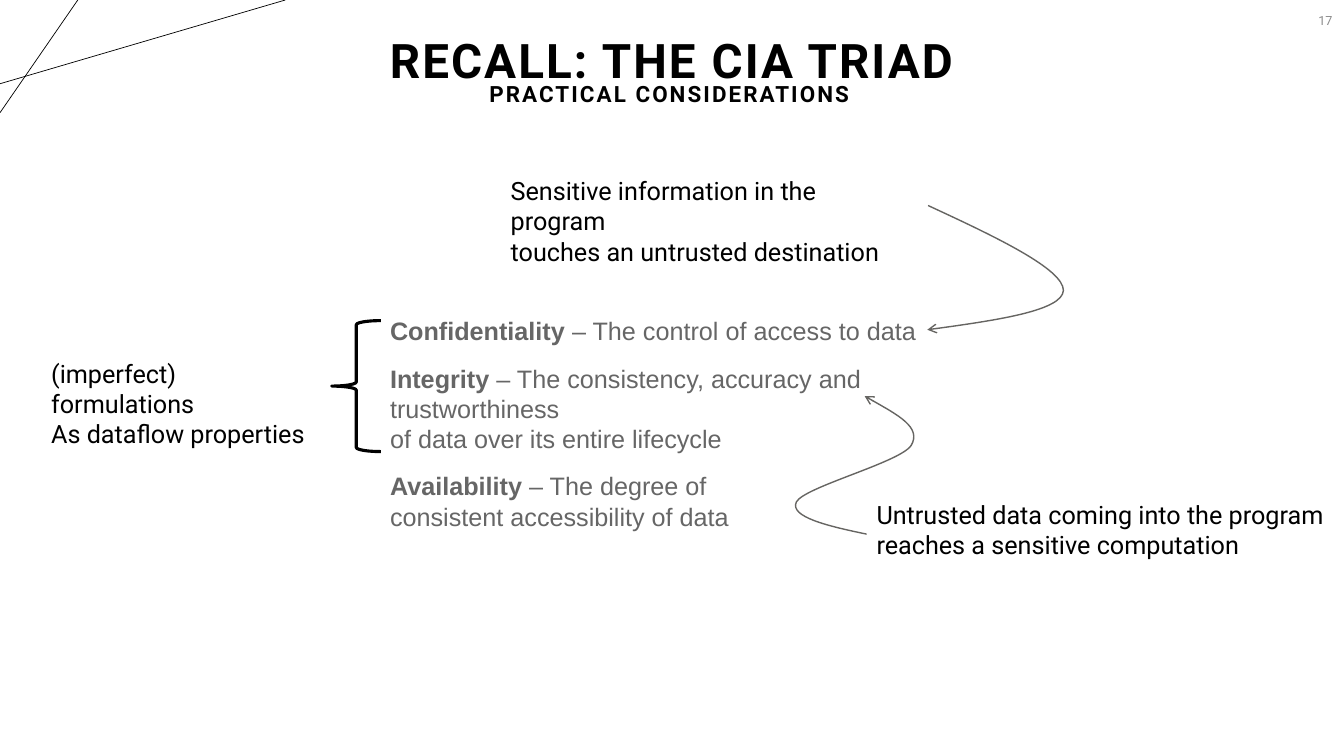
"""Builds the CIA triad slide with its dataflow annotations."""
from lxml.etree import SubElement
from pptx import Presentation
from pptx.dml.color import RGBColor
from pptx.enum.shapes import MSO_CONNECTOR as CONN, MSO_SHAPE as SHAPE
from pptx.enum.text import MSO_ANCHOR as ANCHOR, PP_ALIGN as ALIGN
from pptx.oxml.ns import qn
from pptx.util import Cm, Pt

COLORS = {"ink": "000000", "body": "666666", "arrow": "666562", "number": "8C8C8C"}


def rgb(name):
    """Return the named colour."""
    return RGBColor.from_string(COLORS[name])


def place(sp, left, top, width, height):
    """Set position and size, given in centimetres."""
    sp.left, sp.top, sp.width, sp.height = map(Cm, (left, top, width, height))


def add_run(p, text, size, font, color, bold, spacing):
    """Append one formatted run to a paragraph."""
    r = p.add_run()
    r.text = text
    r.font.size, r.font.name, r.font.bold = Pt(size), font, bold
    r.font.color.rgb = rgb(color)
    if spacing:
        r._r.get_or_add_rPr().set("spc", str(int(spacing * 100)))


def write(sp, text, lead="", size=18, font="Roboto", color="ink", bold=False,
          spacing=0, align=ALIGN.LEFT, anchor=ANCHOR.TOP, line_spacing=1.0):
    """Fill a shape with lines of text, the first opening with a bold lead."""
    tf = sp.text_frame
    tf.word_wrap, tf.vertical_anchor = True, anchor
    tf.margin_left = tf.margin_right = Cm(0.25)
    tf.margin_top = tf.margin_bottom = Cm(0.13)
    for i, line in enumerate(text.split("\n")):
        p = tf.add_paragraph() if i else tf.paragraphs[0]
        p.alignment, p.line_spacing = align, line_spacing
        if lead and i == 0:
            add_run(p, lead, size, font, color, True, spacing)
        add_run(p, line, size, font, color, bold, spacing)


def add_text(s, box, text, **style):
    """Add a text box at the given place."""
    sp = s.shapes.add_textbox(0, 0, 0, 0)
    place(sp, *box)
    write(sp, text, **style)


def add_line(s, start, end):
    """Add a thin straight corner line."""
    c = s.shapes.add_connector(CONN.STRAIGHT, *map(Cm, start + end))
    c.line.color.rgb, c.line.width = rgb("ink"), Pt(0.5)
    SubElement(c._element.spPr, qn("a:effectLst"))


def outline(sp, color, width):
    """Leave a shape with only its outline."""
    sp.shadow.inherit = False
    sp.fill.background()
    sp.line.color.rgb, sp.line.width = rgb(color), Pt(width)


def add_curved_arrow(s, start, *points):
    """Add an arrow along cubic curves, each taking three of the points."""
    builder = s.shapes.build_freeform(*map(Cm, start))
    builder.add_line_segments([(Cm(x), Cm(y)) for x, y in points], close=False)
    sp = builder.convert_to_shape()
    outline(sp, "arrow", 1)
    segments = list(sp._element.iter(qn("a:lnTo")))
    for i in range(0, len(segments), 3):
        curve = SubElement(segments[i].getparent(), qn("a:cubicBezTo"))
        for segment in segments[i:i + 3]:
            curve.append(segment[0])
            segment.getparent().remove(segment)
    SubElement(sp.line._get_or_add_ln(), qn("a:tailEnd"), type="arrow")


def add_headings(s):
    """Write the title and the subtitle below it."""
    style = dict(bold=True, spacing=1.5, align=ALIGN.CENTER,
                 anchor=ANCHOR.MIDDLE, line_spacing=0.9)
    title = s.shapes.title
    place(title, 0.03, -0.25, 33.81, 3.68)
    write(title, "RECALL: THE CIA TRIAD", size=34, **style)
    add_text(s, (-0.03, 0.56, 33.81, 3.68), "PRACTICAL CONSIDERATIONS",
             size=16, **style)


def add_triad(s):
    """Add the three definitions and the brace beside the first two."""
    for top, width, height, lead, text in (
        (7.82, 15.21, 1.02, "Confidentiality ", "– The control of access to data"),
        (9.02, 13.46, 2.57, "Integrity ",
         "– The consistency, accuracy and trustworthiness\n"
         "of data over its entire lifecycle"),
        (11.73, 11.18, 1.8, "Availability ",
         "– The degree of consistent accessibility of data"),
    ):
        add_text(s, (9.58, top, width, height), text, lead=lead,
                 font="Arial", color="body")
    brace = s.shapes.add_shape(SHAPE.LEFT_BRACE, 0, 0, 0, 0)
    place(brace, 8.36, 8.08, 1.24, 3.3)
    outline(brace, "ink", 2.25)


def add_notes_on_dataflow(s):
    """Add the annotations and their curved arrows."""
    for left, top, width, text in (
        (1.04, 8.89, 7.29, "(imperfect) formulations\nAs dataflow properties"),
        (12.62, 4.29, 10.59,
         "Sensitive information in the program\ntouches an untrusted destination"),
        (21.84, 12.45, 11.86,
         "Untrusted data coming into the program\nreaches a sensitive computation"),
    ):
        add_text(s, (left, top, width, 1.8), text)
    add_curved_arrow(s, (23.39, 5.18),
                     (25.1, 5.97), (26.8, 6.78), (26.8, 7.32),
                     (26.77, 7.82), (25.07, 8.08), (23.37, 8.31))
    add_curved_arrow(s, (21.84, 13.46),
                     (20.88, 13.26), (19.89, 13.03), (20.07, 12.65),
                     (20.27, 12.27), (22.66, 11.66), (22.96, 11.23),
                     (23.24, 10.77), (22.5, 10.39), (21.79, 9.98))


def main():
    """Build and save the slide."""
    prs = Presentation()
    prs.slide_width, prs.slide_height = Cm(33.87), Cm(19.05)
    s = prs.slides.add_slide(prs.slide_layouts[5])
    add_line(s, (0, 2.11), (7.19, 0))
    add_line(s, (1.96, 0), (0, 2.84))
    add_text(s, (26.21, 0, 7.62, 1.02), "17", size=9, color="number",
             align=ALIGN.RIGHT, anchor=ANCHOR.MIDDLE)
    add_headings(s)
    add_triad(s)
    add_notes_on_dataflow(s)
    prs.save("out.pptx")


if __name__ == "__main__":
    main()
